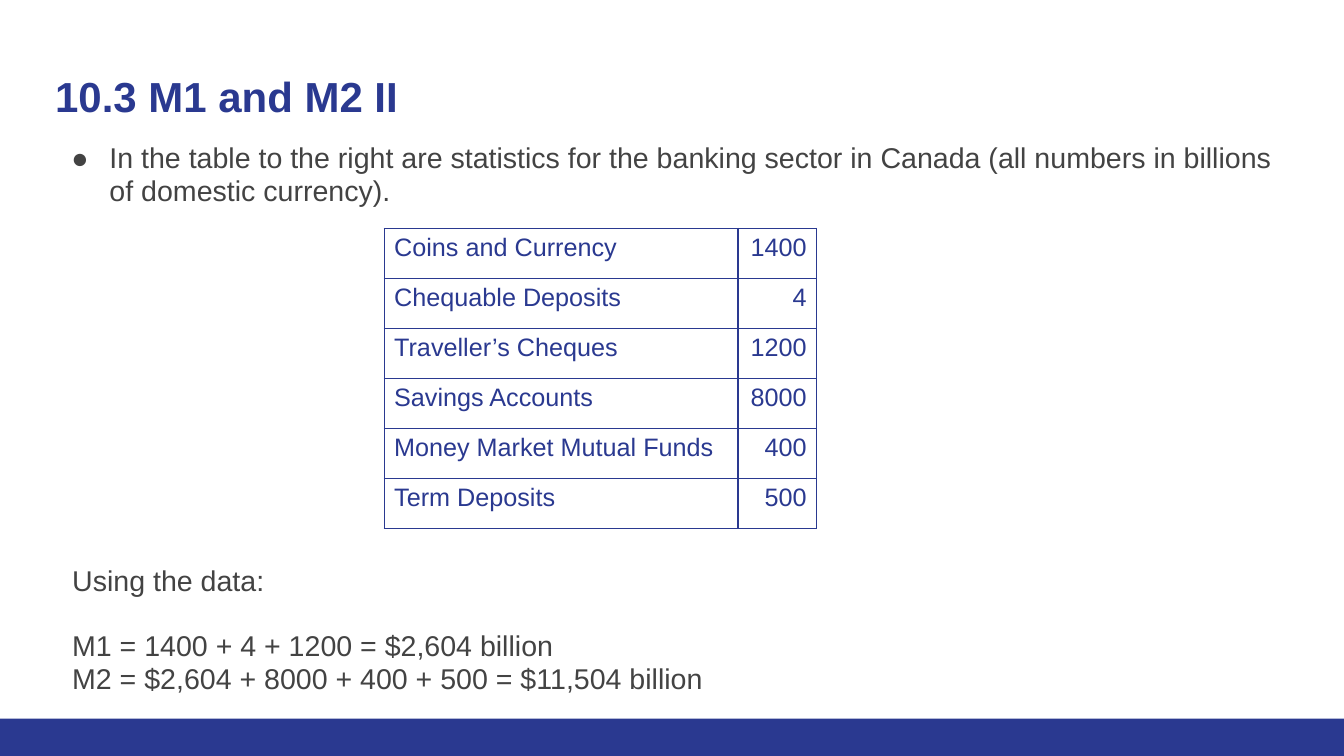
"""Build the slide on M1 and M2 with its table of banking statistics."""
from lxml import etree
from pptx import Presentation
from pptx import util as u
from pptx.dml.color import RGBColor
from pptx.enum import shapes, text
from pptx.oxml import ns

NAVY, GREY = "2A3990", "434343"


def style(para, size, color, bold=False):
    for run in para.runs:
        run.font.name = "Arial"
        run.font.size = u.Pt(size)
        run.font.bold = bold
        run.font.color.rgb = RGBColor.from_string(color)


def add_text(top, height, lines, size, color, bold=False):
    box = slide.shapes.add_textbox(u.Cm(1.14), u.Cm(top), u.Cm(31.55), u.Cm(height))
    frame = box.text_frame
    frame.word_wrap = True
    frame.margin_left = frame.margin_right = u.Cm(0.25)
    frame.margin_top = frame.margin_bottom = u.Cm(0.25)
    frame.text = "\n".join(lines)
    for para in frame.paragraphs:
        style(para, size, color, bold)
    return frame.paragraphs


deck = Presentation()
deck.slide_width, deck.slide_height = u.Cm(33.87), u.Cm(19.05)
slide = deck.slides.add_slide(deck.slide_layouts[6])

bar = slide.shapes.add_shape(
    shapes.MSO_SHAPE.RECTANGLE, 0, u.Cm(18.11), deck.slide_width, u.Cm(0.94))
bar.shadow.inherit = False
bar.fill.solid()
bar.fill.fore_color.rgb = RGBColor.from_string(NAVY)
bar.line.fill.background()

add_text(1.52, 2.26, ["10.3 M1 and M2 II"], 30, NAVY, True)

intro = add_text(3.35, 2.2, [
    "In the table to the right are statistics for the banking sector in Canada "
    "(all numbers in billions of domestic currency)."], 20.4, GREY)
answer = add_text(14.01, 3.95, [
    "Using the data:",
    "M1 = 1400 + 4 + 1200 = $2,604 billion",
    "M2 = $2,604 + 8000 + 400 + 500 = $11,504 billion"], 20.4, GREY)
answer[1].space_before = u.Pt(23)

for para in (*intro, *answer):
    para.line_spacing = 0.95
    para._p.get_or_add_pPr().set("marL", str(u.Cm(0.43)))

props = intro[0]._p.get_or_add_pPr()
props.set("marL", str(u.Cm(1.37)))
props.set("indent", str(u.Cm(-0.96)))
tint = etree.SubElement(props, ns.qn("a:buClr"))
etree.SubElement(tint, ns.qn("a:srgbClr"), val=GREY)
etree.SubElement(props, ns.qn("a:buFont"), typeface="Arial")
etree.SubElement(props, ns.qn("a:buChar"), char="●")

rows = [
    ("Coins and Currency", "1400"),
    ("Chequable Deposits", "4"),
    ("Traveller’s Cheques", "1200"),
    ("Savings Accounts", "8000"),
    ("Money Market Mutual Funds", "400"),
    ("Term Deposits", "500"),
]
table = slide.shapes.add_table(
    len(rows), 2, u.Cm(9.68), u.Cm(5.76), u.Cm(10.9), u.Cm(7.56)).table
table.first_row = table.horz_banding = False
table.columns[0].width, table.columns[1].width = u.Cm(8.92), u.Cm(1.98)

for r, row in enumerate(rows):
    for c, label in enumerate(row):
        cell = table.cell(r, c)
        cell.text_frame.text = label
        para = cell.text_frame.paragraphs[0]
        para.alignment = text.PP_ALIGN.RIGHT if c else text.PP_ALIGN.LEFT
        style(para, 18, NAVY)
        props = cell._tc.get_or_add_tcPr()
        for side in "LRTB":
            edge = etree.SubElement(props, ns.qn("a:ln" + side), w=str(u.Pt(1)))
            fill = etree.SubElement(edge, ns.qn("a:solidFill"))
            etree.SubElement(fill, ns.qn("a:srgbClr"), val=NAVY)
        cell.fill.background()

deck.save("out.pptx")
